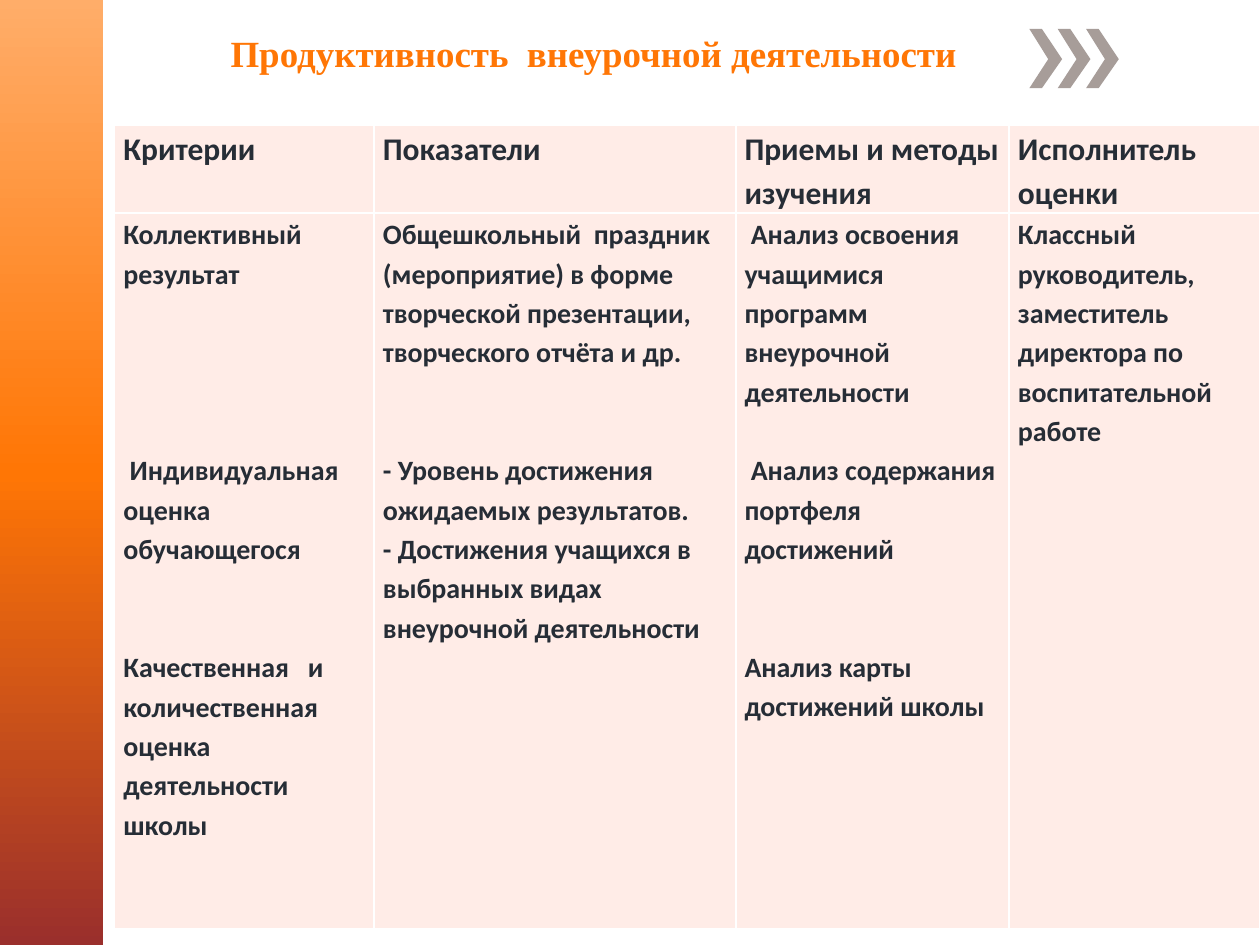
"""Build a slide with a table on the results of after-school work."""
from dataclasses import dataclass

from lxml.etree import SubElement
from pptx import Presentation
from pptx.dml.color import RGBColor
from pptx.enum.shapes import MSO_SHAPE
from pptx.enum.text import PP_ALIGN
from pptx.oxml.ns import qn
from pptx.util import Inches, Pt


@dataclass(frozen=True)
class Theme:
    accent: str = "FF7605"
    mark: str = "A79D99"
    ink: str = "262D36"
    cell: str = "FFECE7"
    rule: str = "FFFFFF"
    fade: tuple = ((0, "FFAD69"), (50, "FF7605"), (100, "9A2F2C"))
    title: float = 21.1
    head: int = 18
    body: int = 16
    serif: str = "Times New Roman"
    sans: str = "Calibri"


THEME = Theme()
LEAD = 1.15
LINE = Pt(22.5)
COLS = (2.06, 2.87, 2.17, 1.99)
ROWS = (0.7, 5.68)
HEADS = ("Критерии", "Показатели", "Приемы и методы изучения", "Исполнитель оценки")
# Each body entry is its text and the empty lines above it.
BODY = (
    (("Коллективный результат", 0),
     (" Индивидуальная оценка обучающегося", 4),
     ("Качественная   и   количественная   оценка   деятельности школы", 2)),
    (("Общешкольный  праздник", 0),
     ("(мероприятие) в форме творческой презентации, творческого отчёта и др.", 0),
     ("- Уровень достижения ожидаемых результатов.", 2),
     ("- Достижения учащихся в выбранных видах внеурочной деятельности", 0)),
    ((" Анализ освоения учащимися программ внеурочной деятельности", 0),
     (" Анализ содержания портфеля достижений", 1),
     ("Анализ карты достижений школы", 2)),
    (("Классный руководитель, заместитель директора по воспитательной работе", 0),),
)


def put(item, vals):
    """Set each named value on an item."""
    for name, val in vals.items():
        setattr(item, name, val)


def paint(fill, tone):
    """Give a fill one solid colour."""
    fill.solid()
    fill.fore_color.rgb = RGBColor.from_string(tone)


def write(para, text, face, size, tone, form):
    """Fill a paragraph with one bold run."""
    put(para, form)
    run = para.add_run()
    run.text = text
    put(run.font, {"name": face, "size": Pt(size), "bold": True})
    run.font.color.rgb = RGBColor.from_string(tone)


def add_bar(slide):
    """Draw the fading bar at the left edge."""
    bar = slide.shapes.add_shape(MSO_SHAPE.RECTANGLE, 0, 0, Inches(0.82), Inches(7.5))
    bar.shadow.inherit = False
    bar.line.fill.background()
    bar.fill.gradient()
    bar.fill.gradient_angle = 270
    stops = bar._element.spPr.find(".//" + qn("a:gsLst"))
    stops.clear()
    for place, tone in THEME.fade:
        stop = SubElement(stops, qn("a:gs"), pos=str(place * 1000))
        SubElement(stop, qn("a:srgbClr"), val=tone)


def add_mark(slide, left):
    """Draw one arrow mark."""
    top, mid, base = 0.23, 0.47, 0.7
    pts = [(left, top), (left + 0.15, mid), (left, base),
           (left + 0.1, base), (left + 0.26, mid), (left + 0.1, top)]
    pts = [(Inches(x), Inches(y)) for x, y in pts]
    pen = slide.shapes.build_freeform(*pts[0])
    pen.add_line_segments(pts[1:], close=True)
    mark = pen.convert_to_shape()
    mark.shadow.inherit = False
    mark.line.fill.background()
    paint(mark.fill, THEME.mark)


def add_title(slide):
    """Add the slide title."""
    box = slide.shapes.add_textbox(Inches(1.33), Inches(0.22), Inches(6.77), Inches(1.04))
    box.text_frame.word_wrap = True
    write(box.text_frame.paragraphs[0], "Продуктивность  внеурочной деятельности",
          THEME.serif, THEME.title, THEME.accent,
          {"alignment": PP_ALIGN.CENTER, "line_spacing": 0.95})


def edge(cell):
    """Rule all four sides of a cell."""
    props = cell._tc.get_or_add_tcPr()
    for side in "LRTB":
        line = SubElement(props, qn("a:ln" + side), w=str(Pt(1)))
        fill = SubElement(line, qn("a:solidFill"))
        SubElement(fill, qn("a:srgbClr"), val=THEME.rule)


def fill_cell(cell, items, size):
    """Style a cell and write its paragraphs."""
    put(cell, {"margin_left": Inches(0.07), "margin_right": Inches(0.07),
               "margin_top": 0, "margin_bottom": 0})
    edge(cell)
    paint(cell.fill, THEME.cell)
    frame = cell.text_frame
    for i, (text, gap) in enumerate(items):
        para = frame.add_paragraph() if i else frame.paragraphs[0]
        write(para, text, THEME.sans, size, THEME.ink,
              {"line_spacing": LEAD, "space_before": LINE * gap})


def add_grid(slide):
    """Add the table of criteria."""
    grid = slide.shapes.add_table(len(ROWS), len(COLS), Inches(0.91), Inches(0.99),
                                  Inches(sum(COLS)), Inches(sum(ROWS))).table
    put(grid, {"first_row": False, "horz_banding": False})
    for row, size in zip(grid.rows, ROWS):
        row.height = Inches(size)
    for i, (wide, head, items) in enumerate(zip(COLS, HEADS, BODY)):
        grid.columns[i].width = Inches(wide)
        fill_cell(grid.cell(0, i), [(head, 0)], THEME.head)
        fill_cell(grid.cell(1, i), items, THEME.body)


def main():
    """Build and save the slide."""
    deck = Presentation()
    put(deck, {"slide_width": Inches(10), "slide_height": Inches(7.5)})
    slide = deck.slides.add_slide(deck.slide_layouts[6])
    add_bar(slide)
    for i in range(3):
        add_mark(slide, 8.17 + 0.45 * i / 2)
    add_title(slide)
    add_grid(slide)
    deck.save("out.pptx")


if __name__ == "__main__":
    main()
